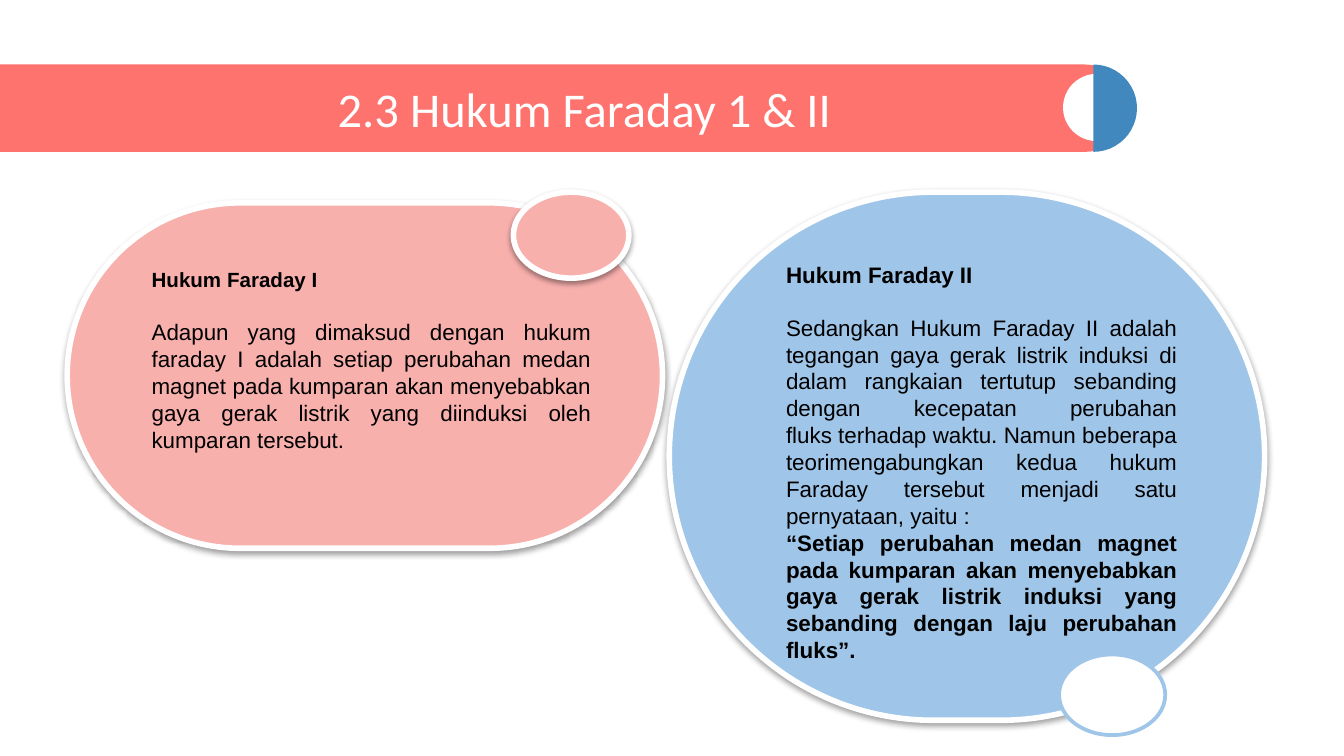
from dataclasses import dataclass

from lxml import etree
from pptx import Presentation
from pptx.dml.color import RGBColor
from pptx.enum.shapes import MSO_SHAPE as Shape
from pptx.enum.text import MSO_ANCHOR as Anchor, MSO_AUTO_SIZE as AutoSize, PP_ALIGN as Align
from pptx.oxml.ns import qn
from pptx.util import Inches, Pt


@dataclass(frozen=True)
class Theme:
    white: str = "FFFFFF"
    black: str = "000000"
    coral: str = "FF736E"
    blue: str = "4088BE"
    pink: str = "F8B0AD"
    sky: str = "9FC5E8"
    title_font: str = "Calibri"
    body_font: str = "Arial"
    title_size: int = 26
    body_size: int = 12
    small_size: int = 11
    heading_gap: int = 14


THEME = Theme()
NBSP = chr(160)


def rgb(color):
    return RGBColor.from_string(color)


def add_shadow(sp):
    effects = sp._element.spPr.find(qn("a:effectLst"))
    shadow = etree.SubElement(effects, qn("a:outerShdw"), blurRad=str(Pt(3.1)),
                              dist=str(Pt(1.6)), dir="5400000", rotWithShape="0")
    color = etree.SubElement(shadow, qn("a:srgbClr"), val=THEME.black)
    etree.SubElement(color, qn("a:alpha"), val="38000")


def add_shape(slide, kind, box, fill, adjust=(), line=None, width=3, shadow=False):
    sp = slide.shapes.add_shape(kind, *map(Inches, box))
    for i, value in enumerate(adjust):
        sp.adjustments[i] = value
    sp.fill.solid()
    sp.fill.fore_color.rgb = rgb(fill)
    if line:
        sp.line.color.rgb = rgb(line)
        sp.line.width = Pt(width)
    else:
        sp.line.fill.background()
    sp.shadow.inherit = False
    if shadow:
        add_shadow(sp)


def set_frame(tf, anchor):
    tf.word_wrap = True
    tf.auto_size = AutoSize.NONE
    tf.vertical_anchor = anchor
    tf.margin_left = tf.margin_right = tf.margin_top = tf.margin_bottom = Inches(0.1)


def add_run(p, text, font, size, color, bold=False):
    r = p.add_run()
    r.text = text
    r.font.name = font
    r.font.size = Pt(size)
    r.font.bold = bold
    r.font.color.rgb = rgb(color)


def add_text(slide, box, paragraphs):
    tf = slide.shapes.add_textbox(*map(Inches, box)).text_frame
    set_frame(tf, Anchor.TOP)
    for i, (text, size, bold, before) in enumerate(paragraphs):
        p = tf.add_paragraph() if i else tf.paragraphs[0]
        p.alignment = Align.JUSTIFY
        p.space_before = Pt(before)
        add_run(p, text, THEME.body_font, size, THEME.black, bold)


def add_header(slide, text):
    add_shape(slide, Shape.ROUNDED_RECTANGLE, (-0.32, 0.48, 8.72, 0.65), THEME.coral, [0.5])
    add_shape(slide, Shape.OVAL, (7.91, 0.55, 0.5, 0.5), THEME.white)
    add_shape(slide, Shape.PIE, (7.81, 0.48, 0.65, 0.65), THEME.blue, [162, 54])
    title = slide.shapes.title
    slide.shapes._spTree.append(title._element)
    title.left, title.top, title.width, title.height = map(Inches, (0.79, 0.6, 7.12, 0.41))
    set_frame(title.text_frame, Anchor.MIDDLE)
    p = title.text_frame.paragraphs[0]
    p.alignment = Align.CENTER
    add_run(p, text, THEME.title_font, THEME.title_size, THEME.white)


def add_bubble(slide, kind, box, fill, adjust=()):
    add_shape(slide, kind, box, fill, adjust, line=THEME.white, shadow=True)


def main():
    prs = Presentation()
    prs.slide_width = Inches(10)
    prs.slide_height = prs.slide_width * 9 // 16
    slide = prs.slides.add_slide(prs.slide_layouts[5])
    add_header(slide, "2.3 Hukum Faraday 1 & II")

    add_bubble(slide, Shape.ROUNDED_RECTANGLE, (0.5, 1.51, 4.43, 2.57), THEME.pink, [0.5])
    add_bubble(slide, Shape.ROUNDED_RECTANGLE, (4.98, 1.43, 4.43, 3.93), THEME.sky, [0.5])
    add_bubble(slide, Shape.OVAL, (3.82, 1.43, 0.86, 0.64), THEME.pink)

    size, gap = THEME.body_size, THEME.heading_gap
    add_text(slide, (1.03, 1.89, 3.47, 2.81), [
        ("Hukum Faraday I", THEME.small_size, True, 0),
        ("Adapun yang dimaksud dengan hukum faraday I adalah setiap perubahan medan magnet "
         "pada kumparan akan menyebabkan gaya gerak listrik yang diinduksi oleh "
         "kumparan tersebut.", size, False, gap),
    ])
    add_text(slide, (5.75, 1.84, 3.11, 0.48), [
        ("Hukum Faraday II", size, True, 0),
        ("Sedangkan Hukum Faraday II adalah tegangan gaya gerak listrik induksi di dalam "
         f"rangkaian tertutup sebanding dengan kecepatan perubahan fluks{NBSP}terhadap waktu. "
         "Namun beberapa teorimengabungkan kedua hukum Faraday tersebut menjadi satu "
         "pernyataan, yaitu :", size, False, gap),
        ("“Setiap perubahan medan magnet pada kumparan akan menyebabkan gaya gerak listrik "
         "induksi yang sebanding dengan laju perubahan fluks”.", size, True, 0),
    ])
    add_shape(slide, Shape.OVAL, (7.88, 4.87, 0.79, 0.6), THEME.white, line=THEME.sky, width=2)
    prs.save("out.pptx")


if __name__ == "__main__":
    main()
